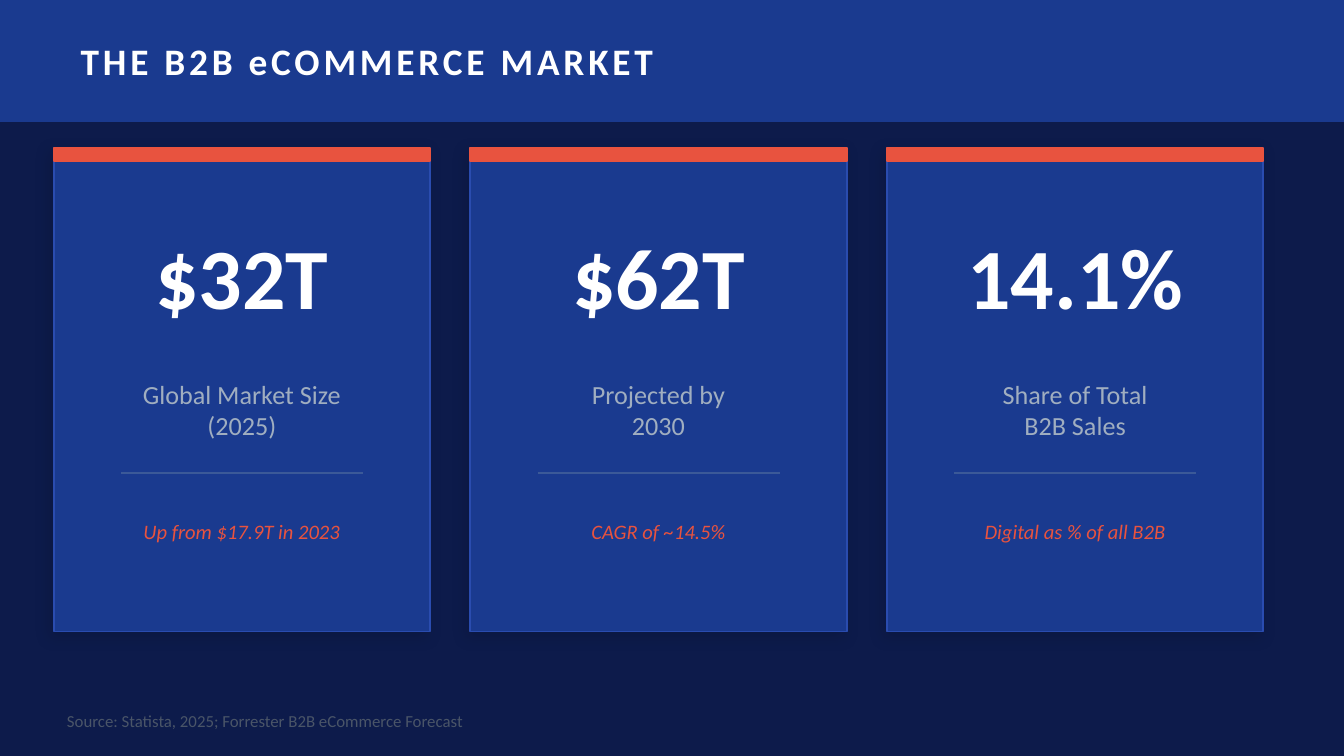
from lxml import etree
from pptx import Presentation
from pptx.dml.color import RGBColor
from pptx.enum import shapes, text
from pptx.oxml.ns import qn
from pptx.util import Inches, Pt

NAVY, BLUE, EDGE, CORAL = "0D1B4B", "1A3A8F", "2A4CAF", "E8533F"
WHITE, SILVER, RULE, SLATE = "FFFFFF", "A0AEC0", "3B5998", "4A5568"

CARDS = [
    ("$32T", ["Global Market Size", "(2025)"], "Up from $17.9T in 2023"),
    ("$62T", ["Projected by", "2030"], "CAGR of ~14.5%"),
    ("14.1%", ["Share of Total", "B2B Sales"], "Digital as % of all B2B"),
]
CARD_LEFT, CARD_TOP, CARD_WIDTH, CARD_HEIGHT, CARD_STEP = 0.4, 1.1, 2.8, 3.6, 3.1


def color(value):
    return RGBColor.from_string(value)


def add_panel(slide, left, top, width, height, fill, line):
    panel = slide.shapes.add_shape(
        shapes.MSO_SHAPE.RECTANGLE, Inches(left), Inches(top), Inches(width), Inches(height)
    )
    panel.shadow.inherit = False
    panel.fill.solid()
    panel.fill.fore_color.rgb = color(fill)
    panel.line.color.rgb = color(line)
    panel.line.width = Pt(1)
    return panel


def add_soft_shadow(panel):
    effects = panel._element.spPr.find(qn("a:effectLst"))
    shadow = etree.SubElement(
        effects, qn("a:outerShdw"), blurRad=str(Pt(8)), dist=str(Pt(3)),
        dir=str(135 * 60000), algn="bl", rotWithShape="0",
    )
    tint = etree.SubElement(shadow, qn("a:srgbClr"), val="000000")
    etree.SubElement(tint, qn("a:alpha"), val="12000")


def write(holder, lines, size, ink, bold=False, italic=False, align=text.PP_ALIGN.LEFT):
    frame = holder.text_frame
    frame.word_wrap = True
    frame.auto_size = text.MSO_AUTO_SIZE.NONE
    frame.vertical_anchor = text.MSO_ANCHOR.MIDDLE
    for index, line in enumerate(lines):
        paragraph = frame.add_paragraph() if index else frame.paragraphs[0]
        paragraph.alignment = align
        run = paragraph.add_run()
        run.text = line
        run.font.name = "Calibri"
        run.font.size = Pt(size)
        run.font.bold = bold
        run.font.italic = italic
        run.font.color.rgb = color(ink)


def add_label(slide, left, top, width, height, lines, size, ink, **style):
    label = slide.shapes.add_textbox(Inches(left), Inches(top), Inches(width), Inches(height))
    write(label, lines, size, ink, **style)


def add_rule(slide, left, right, y):
    rule = slide.shapes.add_connector(
        shapes.MSO_CONNECTOR.STRAIGHT, Inches(left), Inches(y), Inches(right), Inches(y)
    )
    rule.line.color.rgb = color(RULE)
    rule.line.width = Pt(1)
    etree.SubElement(rule._element.spPr, qn("a:effectLst"))


def add_header(slide):
    band = add_panel(slide, 0, 0, 10, 0.9, BLUE, BLUE)
    title = slide.shapes.title
    title.left, title.top = Inches(0.5), Inches(0)
    title.width, title.height = Inches(9), Inches(0.9)
    write(title, ["THE B2B eCOMMERCE MARKET"], 20, WHITE, bold=True)
    title.text_frame.paragraphs[0].runs[0].font._element.set("spc", "200")
    band._element.addnext(title._element)


def add_card(slide, left, figure, caption, note):
    card = add_panel(slide, left, CARD_TOP, CARD_WIDTH, CARD_HEIGHT, BLUE, EDGE)
    add_soft_shadow(card)
    add_panel(slide, left, CARD_TOP, CARD_WIDTH, 0.1, CORAL, CORAL)
    inner, width = left + 0.1, CARD_WIDTH - 0.2
    center = text.PP_ALIGN.CENTER
    add_label(slide, inner, 1.4, width, 1.3, [figure], 46, WHITE, bold=True, align=center)
    add_label(slide, inner, 2.65, width, 0.8, caption, 14, SILVER, align=center)
    add_rule(slide, left + 0.5, left + CARD_WIDTH - 0.5, 3.52)
    add_label(slide, inner, 3.6, width, 0.7, [note], 11, CORAL, italic=True, align=center)


def main():
    deck = Presentation()
    deck.slide_width = Inches(10)
    deck.slide_height = Inches(10 * 9 / 16)
    slide = deck.slides.add_slide(deck.slide_layouts[5])
    slide.background.fill.solid()
    slide.background.fill.fore_color.rgb = color(NAVY)
    add_header(slide)
    for index, (figure, caption, note) in enumerate(CARDS):
        add_card(slide, CARD_LEFT + index * CARD_STEP, figure, caption, note)
    source = "Source: Statista, 2025; Forrester B2B eCommerce Forecast"
    add_label(slide, 0.4, 5.22, 9, 0.28, [source], 9, SLATE)
    deck.save("out.pptx")


if __name__ == "__main__":
    main()
